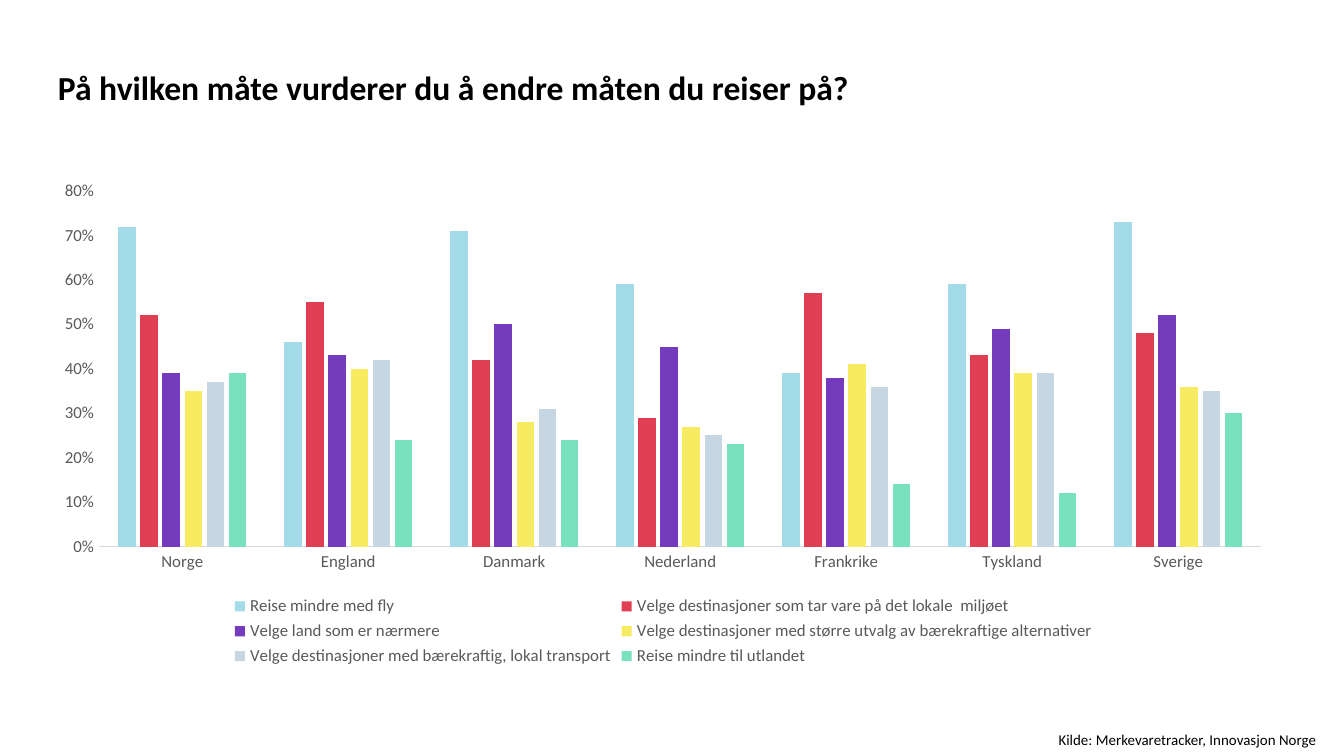
"""Build a slide with a clustered column chart of planned changes in travel habits."""
from pptx import Presentation
from pptx import util as u
from pptx.chart.data import CategoryChartData
from pptx.dml.color import RGBColor
from pptx.enum import chart as ch, text
from pptx.oxml import parse_xml
from pptx.oxml.ns import nsdecls

BLACK = RGBColor(0x00, 0x00, 0x00)
WHITE = RGBColor(0xFF, 0xFF, 0xFF)
GREY = RGBColor(0x59, 0x59, 0x59)
LIGHT_GREY = RGBColor(0xD9, 0xD9, 0xD9)
SKY = RGBColor(0xA4, 0xDB, 0xE8)
RED = RGBColor(0xE0, 0x3E, 0x52)
PURPLE = RGBColor(0x75, 0x3B, 0xBD)
YELLOW = RGBColor(0xF6, 0xEB, 0x61)
MIST = RGBColor(0xC6, 0xD6, 0xE3)
MINT = RGBColor(0x7A, 0xE1, 0xBF)

COUNTRIES = ["Norge", "England", "Danmark", "Nederland", "Frankrike", "Tyskland", "Sverige"]
ANSWERS = [
    ("Reise mindre med fly", SKY, [0.72, 0.46, 0.71, 0.59, 0.39, 0.59, 0.73]),
    ("Velge destinasjoner som tar vare på det lokale  miljøet", RED,
     [0.52, 0.55, 0.42, 0.29, 0.57, 0.43, 0.48]),
    ("Velge land som er nærmere", PURPLE, [0.39, 0.43, 0.5, 0.45, 0.38, 0.49, 0.52]),
    ("Velge destinasjoner med større utvalg av bærekraftige alternativer", YELLOW,
     [0.35, 0.4, 0.28, 0.27, 0.41, 0.39, 0.36]),
    ("Velge destinasjoner med bærekraftig, lokal transport", MIST,
     [0.37, 0.42, 0.31, 0.25, 0.36, 0.39, 0.35]),
    ("Reise mindre til utlandet", MINT, [0.39, 0.24, 0.24, 0.23, 0.14, 0.12, 0.3]),
]


def style_font(font, size, color, bold=False):
    font.name = "Calibri"
    font.size = u.Pt(size)
    font.bold = bold
    font.color.rgb = color


deck = Presentation()
deck.slide_width, deck.slide_height = u.Pt(720), u.Pt(405)
slide = deck.slides.add_slide(deck.slide_layouts[5])

title = slide.shapes.title
title.left, title.top, title.width, title.height = u.Pt(31), u.Pt(36), u.Pt(658), u.Pt(44)
title.fill.solid()
title.fill.fore_color.rgb = WHITE
frame = title.text_frame
frame.margin_left = frame.margin_right = frame.margin_top = frame.margin_bottom = 0
frame.vertical_anchor = text.MSO_ANCHOR.TOP
frame.auto_size = text.MSO_AUTO_SIZE.NONE
frame.text = "På hvilken måte vurderer du å endre måten du reiser på?"
frame.paragraphs[0].alignment = text.PP_ALIGN.LEFT
style_font(frame.paragraphs[0].font, 18, BLACK, bold=True)

data = CategoryChartData(number_format="0%")
data.categories = COUNTRIES
for name, color, values in ANSWERS:
    data.add_series(name, values)
chart = slide.shapes.add_chart(
    ch.XL_CHART_TYPE.COLUMN_CLUSTERED, u.Pt(21.4), u.Pt(91.7), u.Pt(667.6), u.Pt(268), data
).chart
chart.has_title = False
style_font(chart.font, 10, BLACK)
chart.element.find("{*}chart").addnext(parse_xml(
    f'<c:spPr {nsdecls("c", "a")}><a:solidFill><a:srgbClr val="{WHITE}"/></a:solidFill>'
    "<a:ln><a:noFill/></a:ln></c:spPr>"
))

plot = chart.plots[0]
plot.gap_width, plot.overlap = 219, -27
plot.vary_by_categories = False
for series, (name, color, values) in zip(plot.series, ANSWERS):
    series.format.fill.solid()
    series.format.fill.fore_color.rgb = color
    series.invert_if_negative = False

for axis in (chart.category_axis, chart.value_axis):
    axis.has_major_gridlines = False
    axis.major_tick_mark = axis.minor_tick_mark = ch.XL_TICK_MARK.NONE
    style_font(axis.tick_labels.font, 9, GREY)
chart.category_axis.format.line.color.rgb = LIGHT_GREY
chart.category_axis.format.line.width = u.Pt(0.75)
chart.value_axis.format.line.fill.background()
chart.value_axis.minimum_scale, chart.value_axis.maximum_scale = 0, 0.8
chart.value_axis.major_unit = 0.1
chart.value_axis.tick_labels.number_format = "0%"
chart.value_axis.tick_labels.number_format_is_linked = False

chart.has_legend = True
chart.legend.position = ch.XL_LEGEND_POSITION.BOTTOM
chart.legend.include_in_layout = False
style_font(chart.legend.font, 9, GREY)

source = slide.shapes.add_textbox(u.Pt(560), u.Pt(388), u.Pt(155.5), u.Pt(17))
source.text_frame.word_wrap = False
source.text_frame.auto_size = text.MSO_AUTO_SIZE.SHAPE_TO_FIT_TEXT
source.text_frame.text = "Kilde: Merkevaretracker, Innovasjon Norge"
style_font(source.text_frame.paragraphs[0].font, 8, BLACK)

deck.save("out.pptx")
